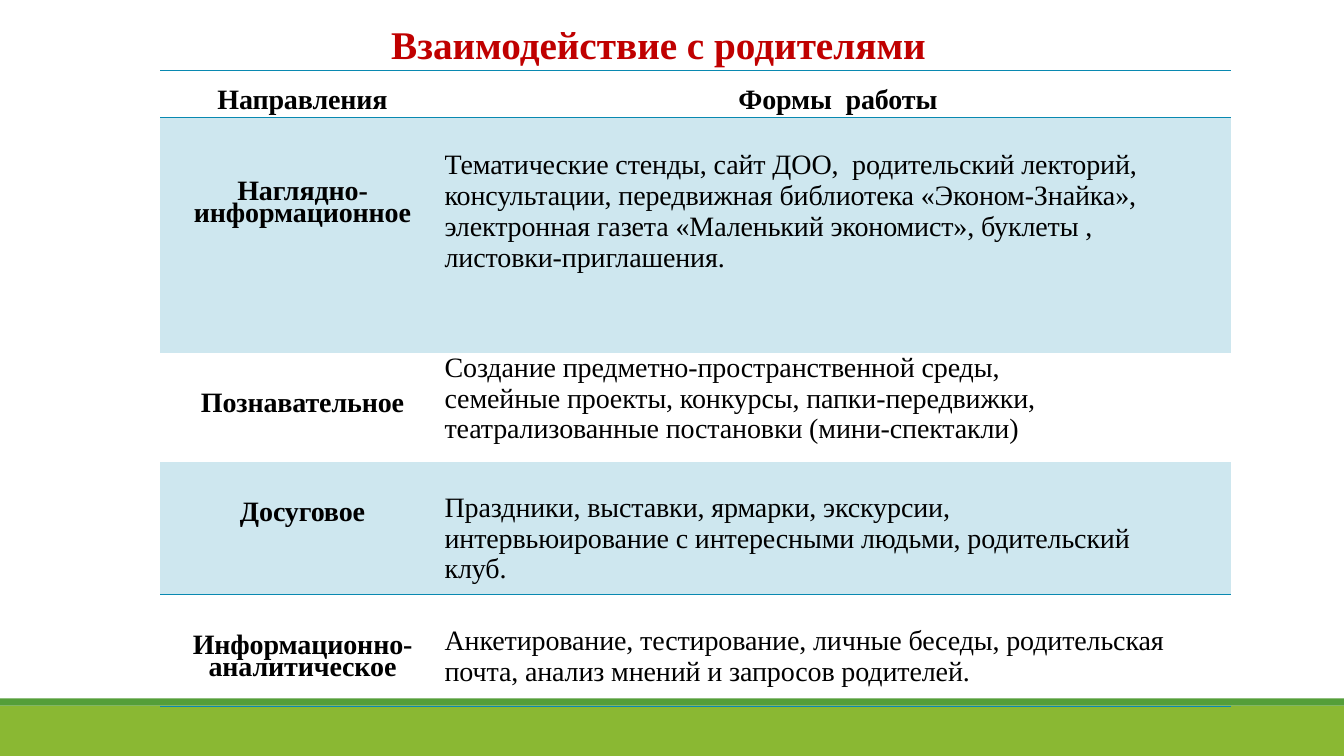
from lxml.etree import SubElement as Sub
from pptx import Presentation as Deck
from pptx.dml.color import RGBColor as Rgb
from pptx.enum.shapes import MSO_SHAPE as Kind
from pptx.enum.text import MSO_ANCHOR as Anchor, MSO_AUTO_SIZE as Fit, PP_ALIGN as Align
from pptx.oxml.ns import qn
from pptx.util import Inches as Inch, Pt

THEME = {
    "font": "Times New Roman", "head": 28, "text": 20,
    "red": "C00000", "ink": "000000", "line": "0989B1", "tint": "CEE7EF",
    "lime": "8AB833", "green": "549E39",
}
WIDE, HIGH = 13.33, 7.5
PLAIN = "{2D5ABB26-0587-4C30-8999-92F81FD0307C}"
COLS = [2.75, 7.87]
ROWS = [
    {"high": 0.47, "tall": 15.9, "skip": 1, "tint": False, "rule": True,
     "name": "Направления", "text": "Формы  работы"},
    {"high": 2.33, "tall": 15.8, "skip": 3, "tint": True, "rule": False,
     "name": "Наглядно-информационное", "top": 0.31, "right": 0.6, "lead": 1.0,
     "text": "Тематические стенды, сайт ДОО,  родительский лекторий, консультации, "
             "передвижная библиотека «Эконом-Знайка», электронная газета "
             "«Маленький экономист», буклеты ,  листовки-приглашения."},
    {"high": 1.08, "tall": 15.7, "skip": 2, "tint": False, "rule": False,
     "name": "Познавательное", "top": 0, "right": 1.5, "lead": 0.99,
     "text": "Создание предметно-пространственной среды, семейные проекты, "
             "конкурсы, папки-передвижки, театрализованные постановки "
             "(мини-спектакли)"},
    {"high": 1.32, "tall": 15.7, "skip": 2, "tint": True, "rule": False,
     "name": "Досуговое", "top": 0.31, "right": 0.6, "lead": 0.99,
     "text": "Праздники, выставки, ярмарки, экскурсии, интервьюирование с "
             "интересными людьми, родительский клуб."},
    {"high": 1.11, "tall": 15.7, "skip": 2, "tint": False, "rule": True,
     "name": "Информационно-аналитическое", "top": 0.31, "right": 0.3, "lead": 0.99,
     "text": "Анкетирование, тестирование, личные беседы, родительская почта, "
             "анализ мнений и запросов родителей."},
]


def tone(key):
    return Rgb.from_string(THEME[key])


def apply(item, form):
    for key, value in form.items():
        setattr(item, key, value)


def place(shape, left, top, wide, high):
    apply(shape, {"left": Inch(left), "top": Inch(top),
                  "width": Inch(wide), "height": Inch(high)})


def write(par, text, size, ink, bold, form):
    run = par.add_run()
    run.text = text
    apply(par, form)
    apply(run.font, {"name": THEME["font"], "size": Pt(THEME[size]), "bold": bold})
    run.font.color.rgb = tone(ink)
    return run


def band(slide, top, high, key):
    shape = slide.shapes.add_shape(Kind.RECTANGLE, 0, Inch(top), Inch(WIDE), Inch(high))
    shape.shadow.inherit = False
    shape.fill.solid()
    shape.fill.fore_color.rgb = tone(key)
    shape.line.fill.background()


def title(slide, text):
    shape = slide.shapes.title
    place(shape, 3.78, 0.15, 5.7, 0.57)
    frame = shape.text_frame
    apply(frame, {"auto_size": Fit.NONE, "word_wrap": True,
                  "vertical_anchor": Anchor.TOP})
    write(frame.paragraphs[0], text, "head", "red", True, {"alignment": Align.LEFT})


def rule(cell):
    props = cell._tc.get_or_add_tcPr()
    for spot, side in enumerate(("lnT", "lnB")):
        line = Sub(props, qn(f"a:{side}"), w=str(Pt(1)))
        fill = Sub(line, qn("a:solidFill"))
        Sub(fill, qn("a:srgbClr"), val=THEME["line"])
        props.insert(spot, line)


def fill(cell, row, text, bold, top, right, form):
    apply(cell, {"margin_left": Inch(0.07), "margin_right": Inch(right),
                 "margin_top": Inch(top), "margin_bottom": 0,
                 "vertical_anchor": Anchor.TOP})
    if row["tint"]:
        cell.fill.solid()
        cell.fill.fore_color.rgb = tone("tint")
    else:
        cell.fill.background()
    if row["rule"]:
        rule(cell)
    run = write(cell.text_frame.paragraphs[0], text, "text", "ink", bold, form)
    run._r.get_or_add_rPr().set("spc", "-10")


def grid(slide, left, top):
    high = sum(row["high"] for row in ROWS)
    table = slide.shapes.add_table(len(ROWS), len(COLS), Inch(left), Inch(top),
                                   Inch(sum(COLS)), Inch(high)).table
    apply(table, {"first_row": False, "horz_banding": False})
    table._tbl.tblPr.find(qn("a:tableStyleId")).text = PLAIN
    for col, wide in zip(table.columns, COLS):
        col.width = Inch(wide)
    for spot, row in enumerate(ROWS):
        table.rows[spot].height = Inch(row["high"])
        drop = row["skip"] * row["tall"] / 72
        mid = {"alignment": Align.CENTER, "line_spacing": Pt(row["tall"])}
        fill(table.cell(spot, 0), row, row["name"], True, drop, 0, mid)
        side = table.cell(spot, 1)
        if "lead" in row:
            form = {"alignment": Align.LEFT, "line_spacing": row["lead"]}
            fill(side, row, row["text"], False, row["top"], row["right"], form)
        else:
            fill(side, row, row["text"], True, drop, 0, mid)


def main():
    deck = Deck()
    apply(deck, {"slide_width": Inch(WIDE), "slide_height": Inch(HIGH)})
    slide = deck.slides.add_slide(deck.slide_layouts[5])
    band(slide, 7, 0.5, "lime")
    band(slide, 6.93, 0.07, "green")
    title(slide, "Взаимодействие с родителями")
    grid(slide, 1.59, 0.7)
    deck.save("out.pptx")


if __name__ == "__main__":
    main()
